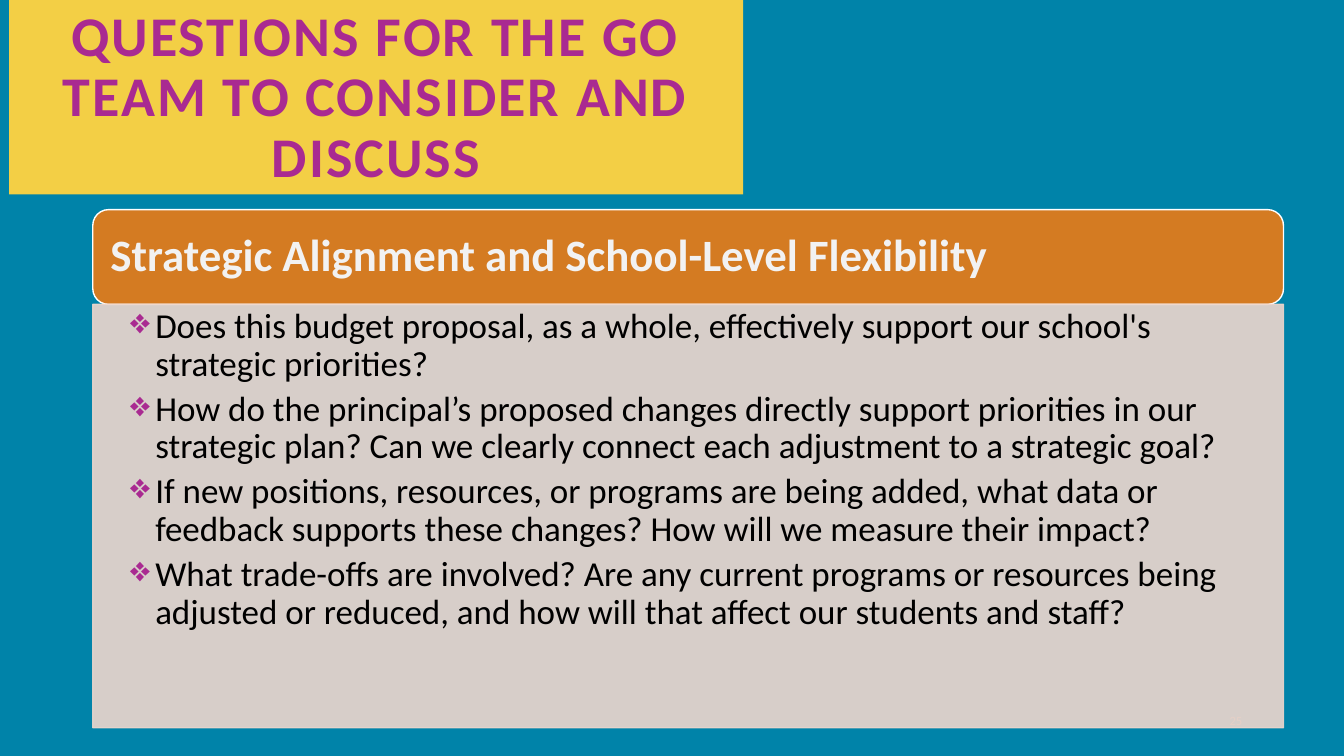
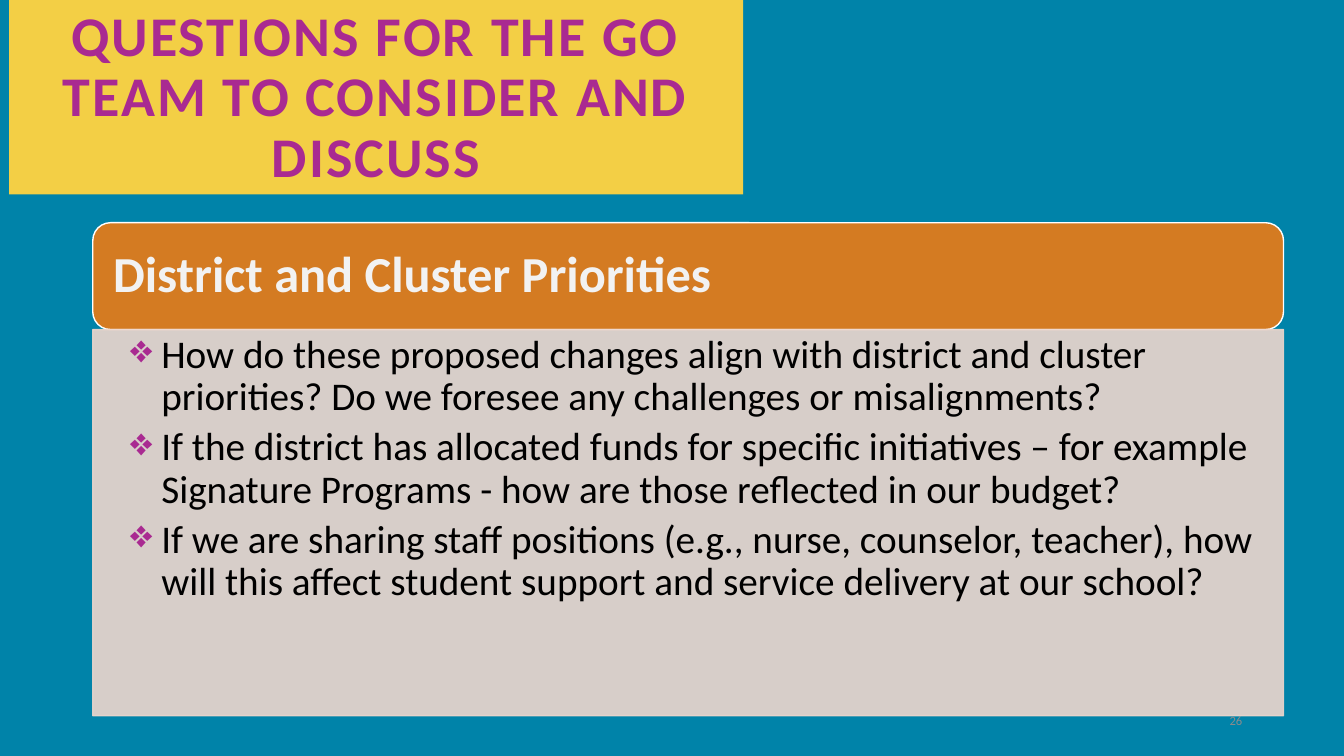
from dataclasses import dataclass

from lxml import etree
from pptx import Presentation
from pptx.dml.color import RGBColor
from pptx.enum import shapes, text
from pptx.oxml import ns
from pptx.util import Inches, Pt


@dataclass(frozen=True)
class Theme:
    font: str = "Calibri"
    background: str = "0083A9"
    band: str = "F3CF45"
    accent: str = "A92A91"
    heading: str = "D47B22"
    heading_text: str = "F2F2F2"
    outline: str = "FFFFFF"
    panel: str = "EFD7CD"
    panel_opacity: int = 90
    body: str = "000000"
    number: str = "8C8C8C"
    title_size: int = 40
    number_size: int = 9


@dataclass(frozen=True)
class Topic:
    number: str
    heading: str
    questions: tuple
    top: float
    heading_height: float
    panel_height: float
    heading_size: int
    question_size: int
    heading_inset: float
    panel_insets: tuple
    indent: float


THEME = Theme()
TITLE = "QUESTIONS FOR THE GO TEAM TO CONSIDER AND DISCUSS"
TITLE_BOX = (0.09, 0, 7.28, 1.93)
NUMBER_BOX = (9.42, 6.95, 3, 0.4)
CONTENT_LEFT, CONTENT_WIDTH = 0.92, 11.81

TOPICS = (
    Topic(
        number="25",
        heading="Strategic Alignment and School-Level Flexibility",
        questions=(
            "Does this budget proposal, as a whole, effectively support our school's strategic priorities?",
            "How do the principal’s proposed changes directly support priorities in our strategic plan? "
            "Can we clearly connect each adjustment to a strategic goal?",
            "If new positions, resources, or programs are being added, what data or feedback supports "
            "these changes? How will we measure their impact?",
            "What trade-offs are involved? Are any current programs or resources being adjusted or "
            "reduced, and how will that affect our students and staff?",
        ),
        top=2.08, heading_height=0.94, panel_height=4.2,
        heading_size=32, question_size=25, heading_inset=0.13,
        panel_insets=(0.37, 0.04, 0.25, 0.04), indent=0.25,
    ),
    Topic(
        number="26",
        heading="District and Cluster Priorities",
        questions=(
            "How do these proposed changes align with district and cluster priorities? "
            "Do we foresee any challenges or misalignments?",
            "If the district has allocated funds for specific initiatives – for example "
            "Signature Programs - how are those reflected in our budget?",
            "If we are sharing staff positions (e.g., nurse, counselor, teacher), how will this "
            "affect student support and service delivery at our school?",
        ),
        top=2.21, heading_height=1.06, panel_height=3.83,
        heading_size=36, question_size=28, heading_inset=0.15,
        panel_insets=(0.37, 0.05, 0.28, 0.05), indent=0.31,
    ),
)


def place(box):
    return [Inches(value) for value in box]


def paint(target, color):
    target.solid()
    target.fore_color.rgb = RGBColor.from_string(color)


def set_opacity(fill_parent, percent):
    for color in fill_parent.findall(f"{ns.qn('a:solidFill')}/{ns.qn('a:srgbClr')}"):
        etree.SubElement(color, ns.qn("a:alpha"), val=str(percent * 1000))


def format_frame(shape, anchor, insets=(0.1, 0.05, 0.1, 0.05)):
    frame = shape.text_frame
    frame.word_wrap = True
    frame.auto_size = text.MSO_AUTO_SIZE.NONE
    frame.vertical_anchor = anchor
    frame.margin_left, frame.margin_top, frame.margin_right, frame.margin_bottom = place(insets)
    return frame


def write(paragraph, words, size, color, bold=False, align=text.PP_ALIGN.LEFT):
    paragraph.alignment = align
    run = paragraph.add_run()
    run.text = words
    run.font.name = THEME.font
    run.font.size = Pt(size)
    run.font.bold = bold
    run.font.color.rgb = RGBColor.from_string(color)
    return run


def add_block(slide, preset, box, fill, outline):
    shape = slide.shapes.add_shape(preset, *place(box))
    shape.shadow.inherit = False
    paint(shape.fill, fill)
    paint(shape.line.fill, outline)
    shape.line.width = Pt(1)
    return shape


def add_bullet(paragraph, indent):
    properties = paragraph._p.get_or_add_pPr()
    properties.set("marL", str(Inches(indent)))
    properties.set("indent", str(-Inches(indent)))
    color = etree.SubElement(properties, ns.qn("a:buClr"))
    etree.SubElement(color, ns.qn("a:srgbClr"), val=THEME.accent)
    etree.SubElement(properties, ns.qn("a:buChar"), char="❖")


def add_title(slide, box):
    title = slide.shapes.title
    title.left, title.top, title.width, title.height = place(box)
    paint(title.fill, THEME.band)
    paragraph = format_frame(title, text.MSO_ANCHOR.BOTTOM).paragraphs[0]
    paragraph.line_spacing = 0.9
    run = write(paragraph, TITLE, THEME.title_size, THEME.accent, True, text.PP_ALIGN.CENTER)
    run._r.get_or_add_rPr().set("spc", "150")


def add_page_number(slide, box, number):
    shape = slide.shapes.add_textbox(*place(box))
    frame = format_frame(shape, text.MSO_ANCHOR.MIDDLE)
    write(frame.paragraphs[0], number, THEME.number_size, THEME.number, align=text.PP_ALIGN.RIGHT)


def add_heading(slide, box, topic):
    shape = add_block(slide, shapes.MSO_SHAPE.ROUNDED_RECTANGLE, box, THEME.heading, THEME.outline)
    frame = format_frame(shape, text.MSO_ANCHOR.MIDDLE, (topic.heading_inset,) * 4)
    paragraph = frame.paragraphs[0]
    paragraph.line_spacing = 0.9
    write(paragraph, topic.heading, topic.heading_size, THEME.heading_text, True)


def add_questions(slide, box, topic):
    panel = add_block(slide, shapes.MSO_SHAPE.RECTANGLE, box, THEME.panel, THEME.panel)
    properties = panel._element.spPr
    for fill_parent in (properties, properties.find(ns.qn("a:ln"))):
        set_opacity(fill_parent, THEME.panel_opacity)
    frame = format_frame(panel, text.MSO_ANCHOR.TOP, topic.panel_insets)
    for index, question in enumerate(topic.questions):
        paragraph = frame.add_paragraph() if index else frame.paragraphs[0]
        paragraph.line_spacing = 0.9
        paragraph.space_after = Pt(topic.question_size * 0.2)
        write(paragraph, question, topic.question_size, THEME.body)
        add_bullet(paragraph, topic.indent)


def add_topic_slide(presentation, topic):
    slide = presentation.slides.add_slide(presentation.slide_layouts[5])
    paint(slide.background.fill, THEME.background)
    add_title(slide, TITLE_BOX)
    add_page_number(slide, NUMBER_BOX, topic.number)
    add_heading(slide, (CONTENT_LEFT, topic.top, CONTENT_WIDTH, topic.heading_height), topic)
    panel_top = topic.top + topic.heading_height
    add_questions(slide, (CONTENT_LEFT, panel_top, CONTENT_WIDTH, topic.panel_height), topic)


def main():
    presentation = Presentation()
    presentation.slide_width, presentation.slide_height = Inches(13.33), Inches(7.5)
    for topic in TOPICS:
        add_topic_slide(presentation, topic)
    presentation.save("out.pptx")


if __name__ == "__main__":
    main()
